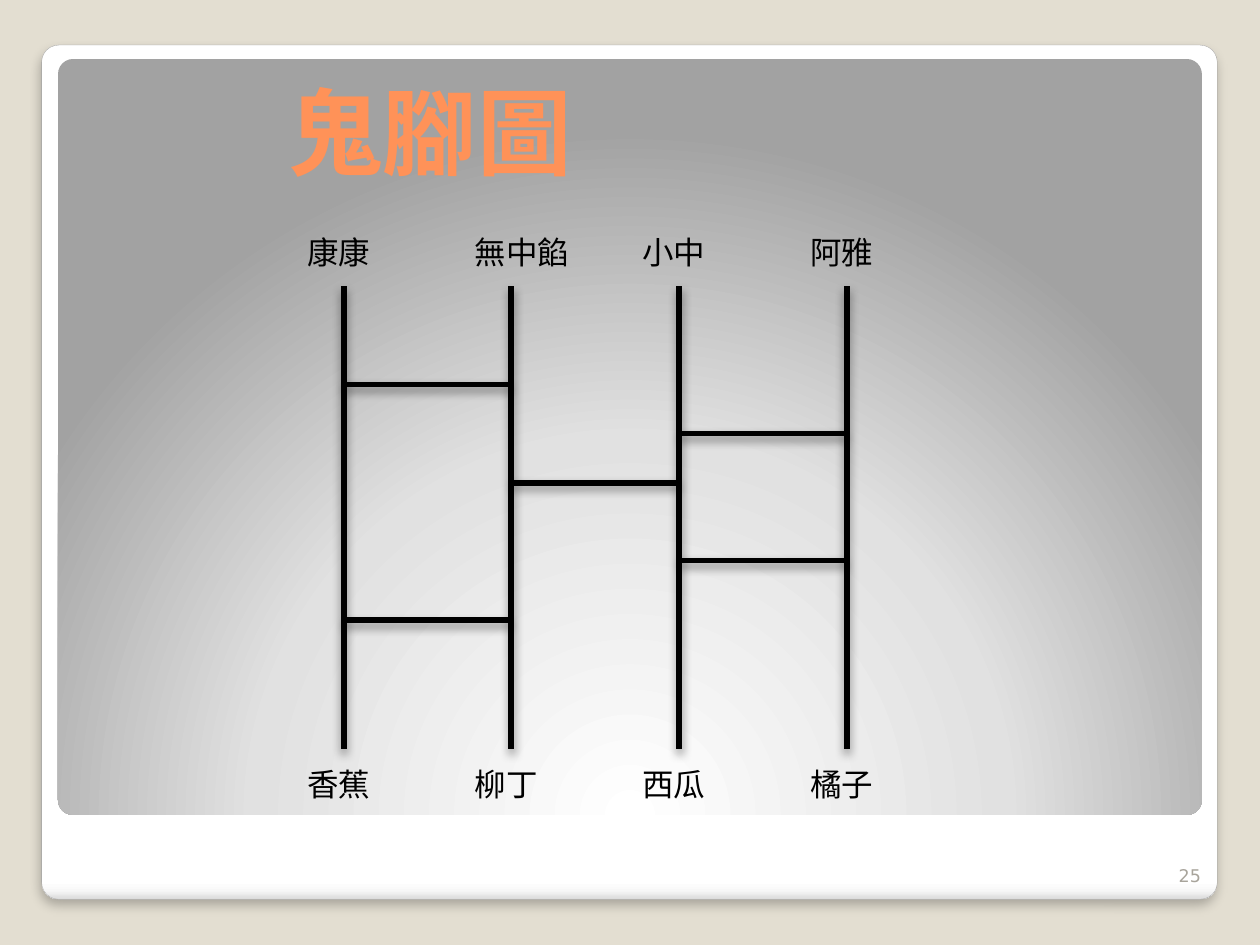
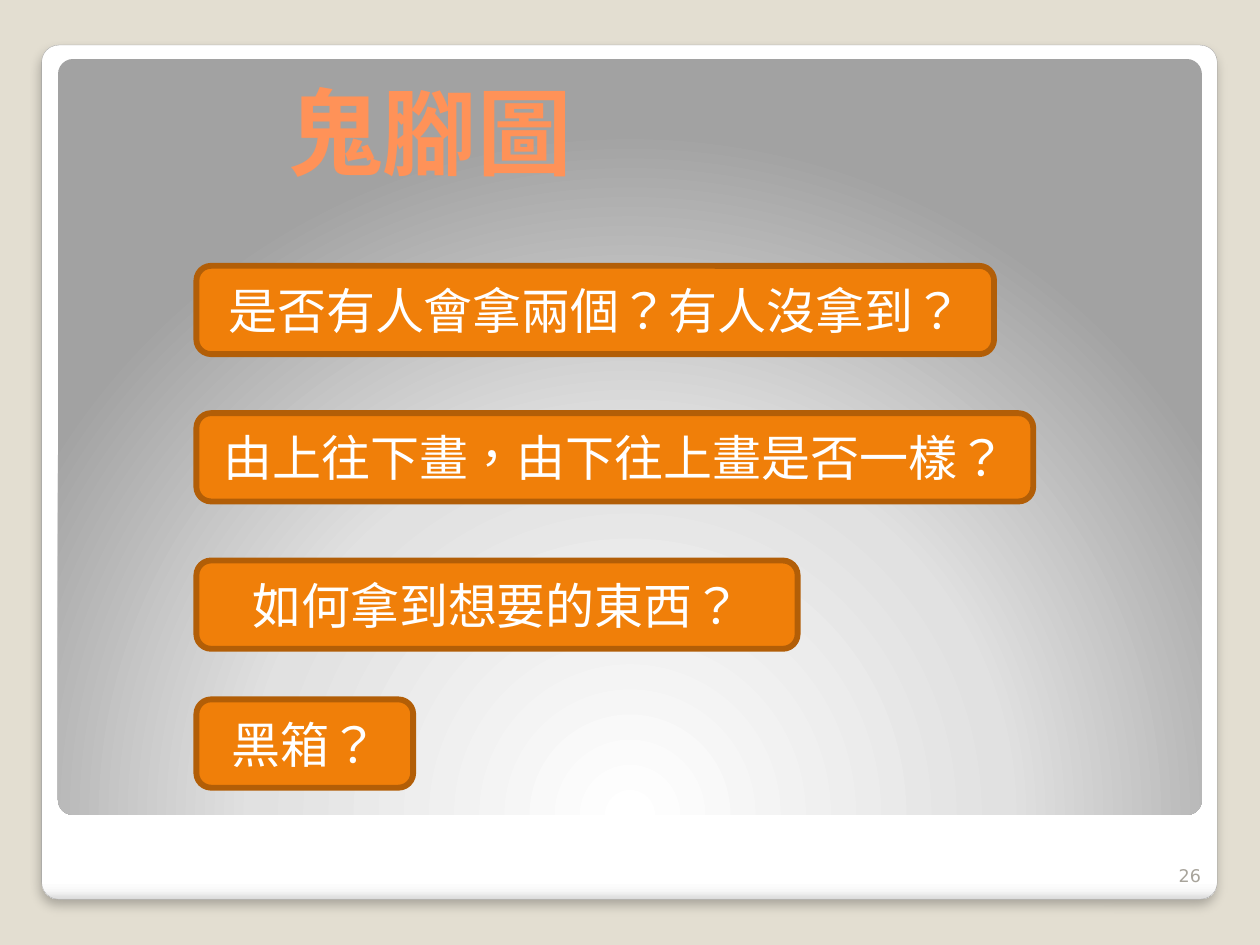
from lxml.etree import SubElement
from pptx import Presentation
from pptx.dml.color import RGBColor
from pptx.enum.shapes import MSO_CONNECTOR, MSO_SHAPE
from pptx.enum.text import MSO_ANCHOR, MSO_AUTO_SIZE, PP_ALIGN
from pptx.oxml.ns import qn
from pptx.util import Cm, Pt

FONT = "DejaVu Sans"
COLORS = {
    "background": "E3DED1",
    "card_edge": "A4A4A4",
    "title": "FF9258",
    "page_number": "A8A49B",
    "ink": "000000",
    "question": "F07F09",
    "question_edge": "B25E07",
    "white": "FFFFFF",
}
CARD_STOPS = [(0, "FFFFFF"), (98, "FFFFFF"), (99, "F7F7F7"), (100, "DADADA")]
PANEL_STOPS = [(0, "FFFFFF"), (55, "E1E1E1"), (100, "A2A2A2")]
TITLE = "鬼腳圖"
HEAVY_LINE = 3.35

# Ladder geometry in centimetres
POLE_LEFT, POLE_STEP = 6.93, 3.38
POLE_TOP, POLE_BOTTOM = 5.77, 15.09
PLAYERS = ["康康", "無中餡", "小中", "阿雅"]
PRIZES = ["香蕉", "柳丁", "西瓜", "橘子"]
RUNGS = [(0, 7.75), (1, 9.73), (2, 8.74), (0, 12.5), (2, 11.3)]  # left pole, height

QUESTIONS = [  # text, top, width
    ("是否有人會拿兩個？有人沒拿到？", 5.36, 16.08),
    ("由上往下畫，由下往上畫是否一樣？", 8.33, 16.87),
    ("如何拿到想要的東西？", 11.3, 12.12),
    ("黑箱？", 14.1, 4.37),
]


def color(name):
    return RGBColor.from_string(COLORS[name])


def write_text(frame, text, size=18, ink="ink", bold=False,
               align=PP_ALIGN.LEFT, anchor=MSO_ANCHOR.TOP):
    frame.word_wrap = True
    frame.auto_size = MSO_AUTO_SIZE.NONE
    frame.vertical_anchor = anchor
    paragraph = frame.paragraphs[0]
    paragraph.alignment = align
    run = paragraph.add_run()
    run.text = text
    run.font.name = FONT
    run.font.size = Pt(size)
    run.font.bold = bold
    run.font.color.rgb = color(ink)
    run.font._element.set("lang", "zh-TW")


def add_label(slide, text, left, top, width, height=1.02, **text_format):
    box = slide.shapes.add_textbox(Cm(left), Cm(top), Cm(width), Cm(height))
    write_text(box.text_frame, text, **text_format)


def add_round_box(slide, left, top, width, height):
    box = slide.shapes.add_shape(MSO_SHAPE.ROUNDED_RECTANGLE,
                                 Cm(left), Cm(top), Cm(width), Cm(height))
    box.shadow.inherit = False
    return box


def set_line(shape, ink, width):
    shape.line.color.rgb = color(ink)
    shape.line.width = Pt(width)


def set_gradient(shape, stops, focus=None):
    """Fill from top to bottom, or in circles around a focus (l, t, r, b)."""
    shape.fill.gradient()
    gradient = shape.element.spPr.find(qn("a:gradFill"))
    gradient.clear()
    gradient.set("rotWithShape", "1")
    stop_list = SubElement(gradient, qn("a:gsLst"))
    for percent, value in stops:
        stop = SubElement(stop_list, qn("a:gs"), pos=str(percent * 1000))
        SubElement(stop, qn("a:srgbClr"), val=value)
    if focus:
        circle = SubElement(gradient, qn("a:path"), path="circle")
        edges = {side: str(percent * 1000) for side, percent in zip("ltrb", focus)}
        SubElement(circle, qn("a:fillToRect"), **edges)
    else:
        SubElement(gradient, qn("a:lin"), ang="5400000", scaled="0")


def add_shadow(shape, opacity, blur, distance):
    """Cast a black shadow straight down."""
    properties = shape.element.spPr
    effects = properties.find(qn("a:effectLst"))
    if effects is None:
        effects = SubElement(properties, qn("a:effectLst"))
    shadow = SubElement(effects, qn("a:outerShdw"), blurRad=str(Pt(blur)),
                        dist=str(Pt(distance)), dir="5400000",
                        algn="t", rotWithShape="0")
    ink = SubElement(shadow, qn("a:srgbClr"), val=COLORS["ink"])
    SubElement(ink, qn("a:alpha"), val=str(opacity * 1000))


def decorate_layout(layout, slide):
    """Draw the card and its panel on a slide, then move them to the layout."""
    card = add_round_box(slide, 0.84, 0.91, 23.7, 17.22)
    set_gradient(card, CARD_STOPS)
    set_line(card, "card_edge", 0.16)
    add_shadow(card, 25, 6, 4)
    panel = add_round_box(slide, 1.17, 1.19, 23.06, 15.24)
    set_gradient(panel, PANEL_STOPS, focus=(50, 175, 50, -75))
    panel.line.fill.background()
    for index, backdrop in enumerate((card, panel)):
        backdrop.adjustments[0] = 0.02
        backdrop.element.nvSpPr.cNvPr.id = 20 + index
        layout.shapes.element.insert(2 + index, backdrop.element)


def add_title_and_number(slide, number):
    title = slide.shapes.title
    title.left, title.top = Cm(5.56), Cm(0.99)
    title.width, title.height = Cm(18.77), Cm(2.92)
    write_text(title.text_frame, TITLE, size=54, ink="title", bold=True,
               anchor=MSO_ANCHOR.BOTTOM)
    add_label(slide, str(number), 23.19, 16.97, 1.27, size=10, ink="page_number",
              align=PP_ALIGN.RIGHT, anchor=MSO_ANCHOR.BOTTOM)


def add_ladder_line(slide, start_x, start_y, end_x, end_y):
    line = slide.shapes.add_connector(MSO_CONNECTOR.STRAIGHT, Cm(start_x),
                                      Cm(start_y), Cm(end_x), Cm(end_y))
    set_line(line, "ink", HEAVY_LINE)
    add_shadow(line, 40, 5.2, 3)


def draw_ladder(slide):
    poles = [POLE_LEFT + POLE_STEP * index for index in range(len(PLAYERS))]
    for x in poles:
        add_ladder_line(slide, x, POLE_TOP, x, POLE_BOTTOM)
    for left_pole, y in RUNGS:
        add_ladder_line(slide, poles[left_pole], y, poles[left_pole + 1], y)
    for names, top in ((PLAYERS, 4.57), (PRIZES, 15.29)):
        for x, name in zip(poles, names):
            add_label(slide, name, x - 0.99, top, 0.7 + 0.63 * len(name))


def add_question(slide, text, top, width):
    box = add_round_box(slide, 3.96, top, width, 1.78)
    box.fill.solid()
    box.fill.fore_color.rgb = color("question")
    set_line(box, "question_edge", HEAVY_LINE)
    write_text(box.text_frame, text, size=28, ink="white",
               align=PP_ALIGN.CENTER, anchor=MSO_ANCHOR.MIDDLE)


def main():
    deck = Presentation()
    deck.slide_width, deck.slide_height = Cm(25.4), Cm(19.05)
    background = deck.slide_master.background.fill
    background.solid()
    background.fore_color.rgb = color("background")

    title_only = deck.slide_layouts[5]
    ladder_slide = deck.slides.add_slide(title_only)
    question_slide = deck.slides.add_slide(title_only)
    decorate_layout(title_only, ladder_slide)
    for number, slide in enumerate(deck.slides, start=25):
        add_title_and_number(slide, number)

    draw_ladder(ladder_slide)
    for text, top, width in QUESTIONS:
        add_question(question_slide, text, top, width)
    deck.save("out.pptx")


if __name__ == "__main__":
    main()
